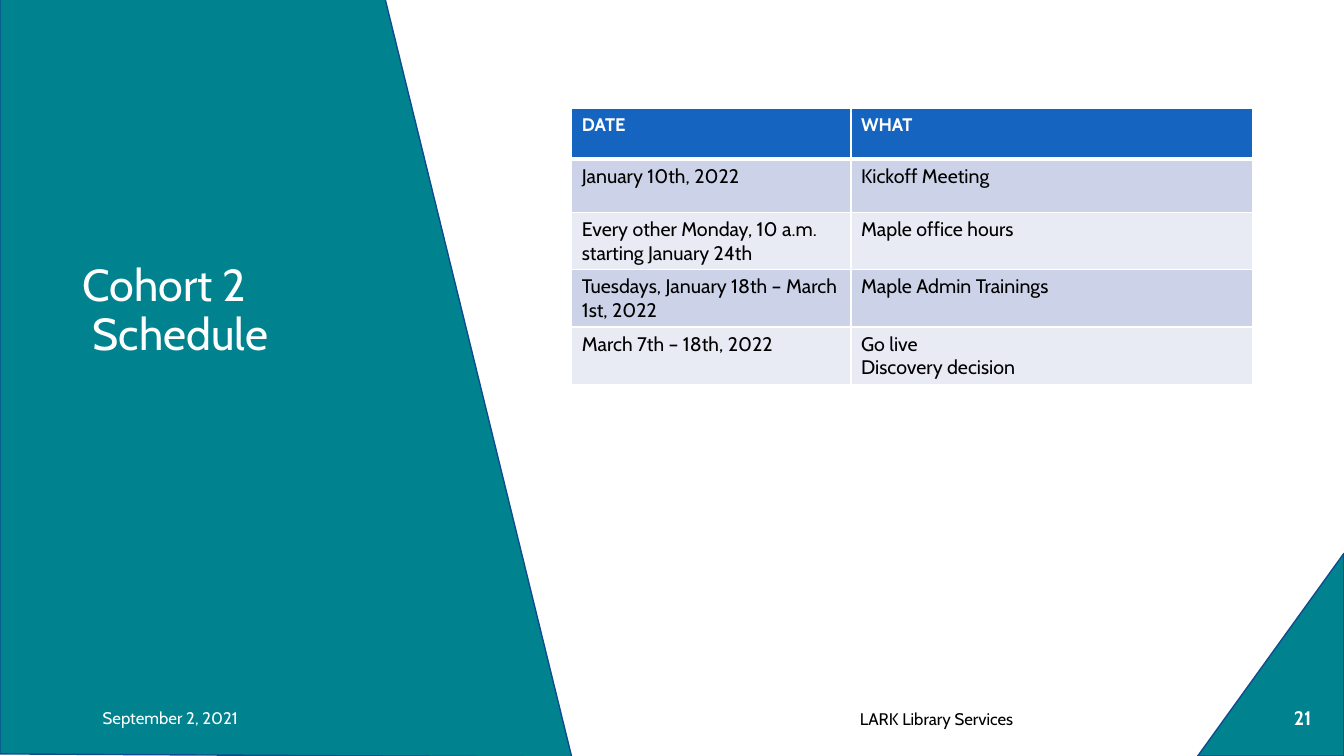
from dataclasses import dataclass, field

import lxml.etree
import pptx
import pptx.dml.color
import pptx.enum.shapes
import pptx.enum.text
import pptx.oxml.ns
import pptx.util

SLIDE_WIDTH = pptx.util.Inches(13.33)
SLIDE_HEIGHT = pptx.util.Inches(7.5)
TEAL, NAVY, BLUE, WHITE, BLACK = "00838E", "104B8E", "1565C0", "FFFFFF", "000000"
ROW_BANDS = ("CCD3E8", "E8EAF4")
LEFT = pptx.enum.text.PP_ALIGN.LEFT
CENTER = pptx.enum.text.PP_ALIGN.CENTER
MIDDLE = pptx.enum.text.MSO_ANCHOR.MIDDLE


@dataclass(frozen=True)
class Box:
    left: float
    top: float
    width: float
    height: float

    def place(self) -> tuple[int, int, int, int]:
        return (across(self.left), down(self.top), across(self.width), down(self.height))


@dataclass(frozen=True)
class Label:
    text: str
    box: Box
    font: dict
    paragraph: dict = field(default_factory=dict)


@dataclass(frozen=True)
class Event:
    date: str
    what: str
    height: float


FOOTERS = (
    Label("LARK Library Services", Box(52.81, 92.4, 33.76, 5.33),
          {"size": 12, "color": BLACK}, {"alignment": CENTER}),
    Label("21", Box(94.75, 92.27, 4.35, 5.33),
          {"size": 14, "color": WHITE, "bold": True}, {"alignment": CENTER}),
    Label("September 2, 2021", Box(6.9, 92.27, 22.51, 5.33),
          {"size": 12, "color": WHITE}, {"alignment": LEFT}),
)
TITLE = Label("Cohort 2\v Schedule", Box(5.4, 24.93, 25.51, 23.33),
              {"size": 32, "color": WHITE}, {"alignment": LEFT, "line_spacing": 0.9})
SCHEDULE = (
    Event("DATE", "WHAT", 6.67),
    Event("January 10th, 2022", "Kickoff Meeting", 7.07),
    Event("Every other Monday, 10 a.m. starting January 24th", "Maple office hours", 6.67),
    Event("Tuesdays, January 18th – March 1st, 2022", "Maple Admin Trainings", 6.67),
    Event("March 7th – 18th, 2022", "Go live\vDiscovery decision", 6.13),
)
SCHEDULE_COLUMNS = (20.78, 29.86)
PANEL_CORNERS = ((0, 99.73), (0, -1.6), (28.51, -1.2), (42.54, 100.13))
CORNER_TRIANGLE = Box(87.02, 76.93, 15.08, 19.33)


def across(percent: float) -> int:
    return round(SLIDE_WIDTH * percent / 100)


def down(percent: float) -> int:
    return round(SLIDE_HEIGHT * percent / 100)


def rgb(value: str) -> pptx.dml.color.RGBColor:
    return pptx.dml.color.RGBColor.from_string(value)


def apply(target, values: dict) -> None:
    for name, value in values.items():
        setattr(target, name, value)


def write(frame, text: str, font: dict, paragraph: dict) -> None:
    frame.text = text
    line = frame.paragraphs[0]
    apply(line, paragraph)
    for run in line.runs:
        apply(run.font, {"name": "Cabin", "size": pptx.util.Pt(font["size"]),
                         "bold": font.get("bold", False)})
        run.font.color.rgb = rgb(font["color"])


def paint(shape) -> None:
    shape.shadow.inherit = False
    shape.fill.solid()
    shape.fill.fore_color.rgb = rgb(TEAL)
    shape.line.color.rgb = rgb(NAVY)
    shape.line.width = pptx.util.Pt(1)


def draw_background(slide) -> None:
    triangle = slide.shapes.add_shape(
        pptx.enum.shapes.MSO_SHAPE.RIGHT_TRIANGLE, *CORNER_TRIANGLE.place())
    triangle.rotation = 270
    paint(triangle)
    corners = [(across(x), down(y)) for x, y in PANEL_CORNERS]
    panel = slide.shapes.build_freeform(*corners[0])
    panel.add_line_segments(corners[1:], close=True)
    paint(panel.convert_to_shape())


def draw_title(slide) -> None:
    title = slide.shapes.title
    apply(title, dict(zip(("left", "top", "width", "height"), TITLE.box.place())))
    apply(title.text_frame, {"vertical_anchor": pptx.enum.text.MSO_ANCHOR.BOTTOM,
                             "word_wrap": True,
                             "auto_size": pptx.enum.text.MSO_AUTO_SIZE.NONE})
    write(title.text_frame, TITLE.text, TITLE.font, TITLE.paragraph)
    slide.shapes._spTree.append(title._element)


def draw_footer(slide, label: Label) -> None:
    frame = slide.shapes.add_textbox(*label.box.place()).text_frame
    apply(frame, {"word_wrap": True, "vertical_anchor": MIDDLE})
    write(frame, label.text, label.font,
          {"space_after": pptx.util.Pt(6), **label.paragraph})


def add_borders(cell, widths: dict[str, int]) -> None:
    properties = cell._tc.get_or_add_tcPr()
    for position, (side, width) in enumerate(widths.items()):
        border = lxml.etree.Element(pptx.oxml.ns.qn(f"a:ln{side}"),
                                    w=str(pptx.util.Pt(width)))
        fill = lxml.etree.SubElement(border, pptx.oxml.ns.qn("a:solidFill"))
        lxml.etree.SubElement(fill, pptx.oxml.ns.qn("a:srgbClr"), val=WHITE)
        properties.insert(position, border)


def draw_schedule(slide) -> None:
    box = Box(42.54, 14.4, sum(SCHEDULE_COLUMNS), sum(event.height for event in SCHEDULE))
    table = slide.shapes.add_table(
        len(SCHEDULE), len(SCHEDULE_COLUMNS), *box.place()).table
    for column, width in zip(table.columns, SCHEDULE_COLUMNS):
        column.width = across(width)
    for index, event in enumerate(SCHEDULE):
        table.rows[index].height = down(event.height)
        heading = index == 0
        font = ({"size": 13, "color": WHITE, "bold": True} if heading
                else {"size": 14, "color": BLACK})
        background = BLUE if heading else ROW_BANDS[(index - 1) % 2]
        borders = {"L": 1, "R": 1, "T": 3 if index == 1 else 1, "B": 3 if heading else 1}
        for cell, text in zip(table.rows[index].cells, (event.date, event.what)):
            write(cell.text_frame, text, font, {"alignment": LEFT})
            cell.fill.solid()
            cell.fill.fore_color.rgb = rgb(background)
            add_borders(cell, borders)


def main() -> None:
    presentation = pptx.Presentation()
    apply(presentation, {"slide_width": SLIDE_WIDTH, "slide_height": SLIDE_HEIGHT})
    slide = presentation.slides.add_slide(presentation.slide_layouts[5])
    draw_background(slide)
    draw_title(slide)
    for footer in FOOTERS:
        draw_footer(slide, footer)
    draw_schedule(slide)
    presentation.save("out.pptx")


if __name__ == "__main__":
    main()
